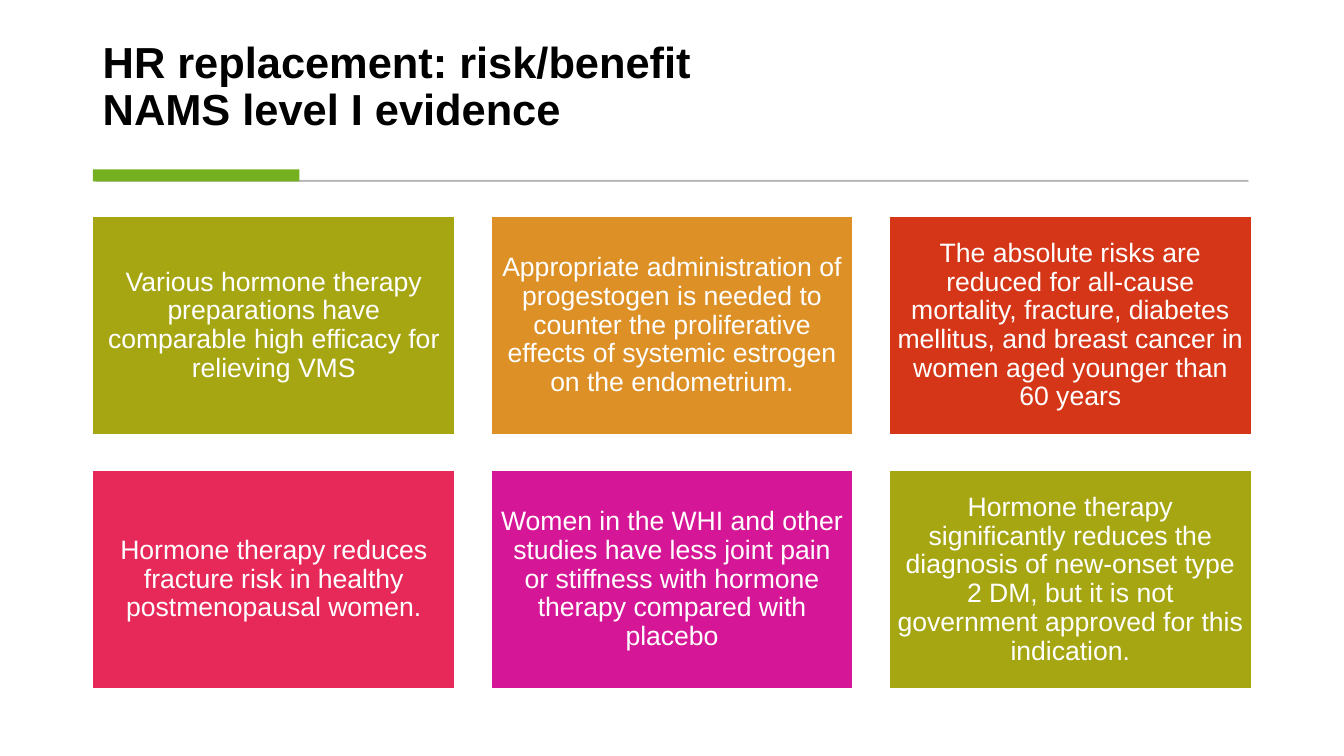
import pptx
import pptx.util
import pptx.dml.color
import pptx.enum.shapes
import pptx.enum.text
import pptx.oxml.ns
import lxml.etree

Inches = pptx.util.Inches
Pt = pptx.util.Pt
ALIGN = pptx.enum.text.PP_ALIGN
ANCHOR = pptx.enum.text.MSO_ANCHOR

COLORS = {
    "black": "000000",
    "white": "FFFFFF",
    "gray": "595959",
    "green": "74B01F",
    "olive": "A6A612",
    "orange": "DD9026",
    "red": "D53617",
    "rose": "E7295A",
    "magenta": "D51797",
}

CARDS = [
    ("olive", "Various hormone therapy preparations have comparable high efficacy "
              "for relieving VMS"),
    ("orange", "Appropriate administration of progestogen is needed to counter the "
               "proliferative effects of systemic estrogen on the endometrium."),
    ("red", "The absolute risks are reduced for all-cause mortality, fracture, "
            "diabetes mellitus, and breast cancer in women aged younger than 60 years"),
    ("rose", "Hormone therapy reduces fracture risk in healthy postmenopausal women."),
    ("magenta", "Women in the WHI and other studies have less joint pain or stiffness "
                "with hormone therapy compared with placebo"),
    ("olive", "Hormone therapy significantly reduces the diagnosis of new-onset type 2 DM, "
              "but it is not government approved for this indication."),
]


def color(name):
    return pptx.dml.color.RGBColor.from_string(COLORS[name])


def set_opacity(fill_format, name, percent):
    fill_format.solid()
    fill_format.fore_color.rgb = color(name)


def write_text(shape, text, size, ink, bold=False, align=ALIGN.LEFT,
               anchor=ANCHOR.MIDDLE, inset=0.1, inset_y=0.05):
    frame = shape.text_frame
    frame.word_wrap = True
    frame.vertical_anchor = anchor
    frame.margin_left = frame.margin_right = Inches(inset)
    frame.margin_top = frame.margin_bottom = Inches(inset_y)
    para = frame.paragraphs[0]
    para.text = text
    para.alignment = align
    para.line_spacing = 0.9
    for span in para.runs:
        span.font.name = "Arial"
        span.font.size = Pt(size)
        span.font.bold = bold
        span.font.color.rgb = color(ink)


def add_block(page, left, top, width, height, fill, outline=None, weight=1, opacity=100):
    block = page.shapes.add_shape(
        pptx.enum.shapes.MSO_SHAPE.RECTANGLE,
        Inches(left), Inches(top), Inches(width), Inches(height))
    block.shadow.inherit = False
    block.fill.solid()
    block.fill.fore_color.rgb = color(fill)
    if outline:
        block.line.color.rgb = color(outline)
        block.line.width = Pt(weight)
    else:
        block.line.fill.background()
    if opacity < 100:
        tag = pptx.oxml.ns.qn("a:alpha")
        for tone in block.element.spPr.iter(pptx.oxml.ns.qn("a:srgbClr")):
            lxml.etree.SubElement(tone, tag).set("val", str(opacity * 1000))
    return block


def add_title(page, left, top, width, height):
    box = page.shapes.add_textbox(Inches(left), Inches(top), Inches(width), Inches(height))
    write_text(box, "HR replacement: risk/benefit\vNAMS level I evidence", 31, "black",
               bold=True, anchor=ANCHOR.BOTTOM)


def add_divider(page, left, top, width):
    add_block(page, left + 0.03, top + 0.11, width - 0.06, 0.01, "gray",
              outline="gray", weight=0.75, opacity=30)
    add_block(page, left, top, 2.05, 0.12, "green")


def add_cards(page, left, top, width, height, columns=3, rows=2, gap=0.36):
    card_width = (width - gap * (columns - 1)) / columns
    card_height = (height - gap * (rows - 1)) / rows
    for index, (fill, text) in enumerate(CARDS):
        row, column = divmod(index, columns)
        card = add_block(page, left + column * (card_width + gap),
                         top + row * (card_height + gap),
                         card_width, card_height, fill, outline="white")
        write_text(card, text, 19, "white", align=ALIGN.CENTER, inset=0.08, inset_y=0.08)


def main():
    deck = pptx.Presentation()
    deck.slide_width = Inches(13.33)
    deck.slide_height = Inches(7.5)
    page = deck.slides.add_slide(deck.slide_layouts[6])
    add_title(page, 0.92, 0.28, 11.49, 1.11)
    add_divider(page, 0.92, 1.68, 11.49)
    add_cards(page, 0.92, 2.15, 11.49, 4.68)
    deck.save("out.pptx")


if __name__ == "__main__":
    main()
